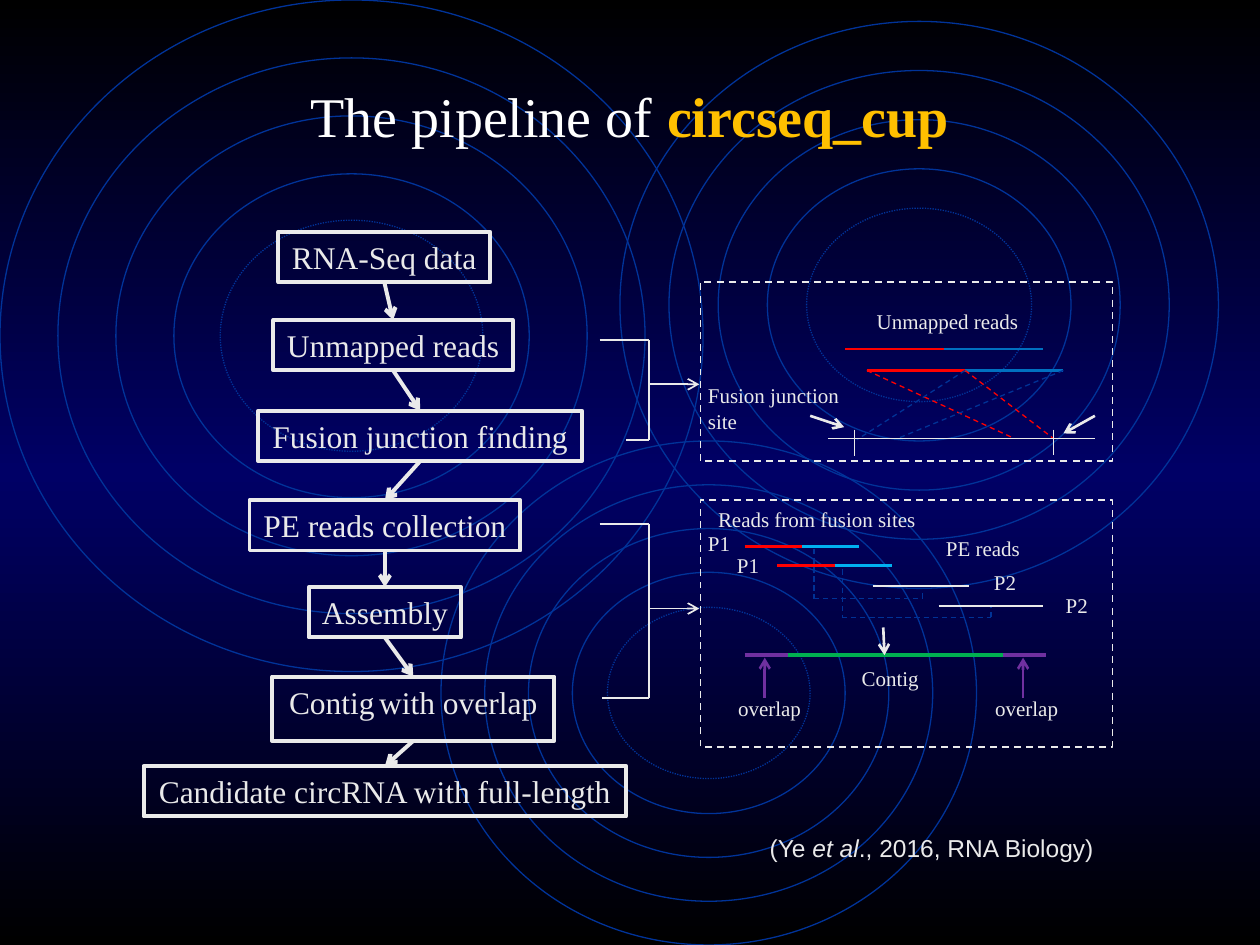
from dataclasses import dataclass
from itertools import pairwise

import pptx
import pptx.dml.color
import pptx.enum.dml
import pptx.enum.shapes
import pptx.enum.text
import pptx.oxml
import pptx.oxml.ns
import pptx.util
from lxml import etree

COLORS = {
    "black": "000000", "navy": "000066", "ring": "003399", "text": "EAEAEA",
    "white": "FFFFFF", "gold": "FFC000", "red": "FF0000", "blue": "0070C0",
    "sky": "00B0F0", "green": "00B050", "purple": "7030A0", "link": "003296",
}
SERIF = "Times New Roman"
COLUMNS, ROWS = 100, 75  # square grid cells, a tenth of an inch each
CELL = pptx.util.Inches(0.1)
DASH = pptx.enum.dml.MSO_LINE.DASH
DOT = pptx.enum.dml.MSO_LINE.ROUND_DOT
SHAPE = pptx.enum.shapes.MSO_SHAPE
ALIGN = pptx.enum.text.PP_ALIGN
ANCHOR = pptx.enum.text.MSO_ANCHOR


@dataclass
class Rings:
    x: float
    y: float
    width: float
    height: float
    step: float


@dataclass
class Step:
    text: str
    x: float
    y: float
    width: float
    height: float = 4.0


@dataclass
class Label:
    text: str
    x: float
    y: float
    width: float
    height: float = 3.0
    wrap: bool = False


@dataclass
class Line:
    x1: float
    y1: float
    x2: float
    y2: float
    color: str = "text"
    width: float = 1.5
    dash: bool = False
    arrow: bool = False


@dataclass
class Bracket:
    top: float
    bottom: float
    middle: float
    top_start: float
    bottom_start: float


RINGS = [
    Rings(27.9, 26.65, 55.8, 53.3, 9.2),
    Rings(56.25, 55, 42.5, 40, 6.95),
    Rings(72.95, 24.2, 47.5, 45, 7.8),
]
STEPS = [
    Step("RNA-Seq data", 22.1, 18.4, 16.8),
    Step("Unmapped reads", 21.7, 25.4, 19),
    Step("Fusion junction finding", 20.5, 32.6, 25.7),
    Step("PE reads collection", 19.8, 39.7, 21.5),
    Step("Assembly", 24.5, 46.6, 12.1),
    Step("Contig with overlap", 21.6, 53.7, 22.4, 5.1),
    Step("Candidate circRNA with full-length", 11.4, 60.8, 38.3),
]
BRACKETS = [Bracket(27, 34.9, 30.5, 47.6, 49.7), Bracket(41.6, 55.4, 48.3, 47.6, 47.8)]
PANELS = [(55.6, 22.4, 32.7, 14.2), (55.6, 39.7, 32.7, 19.6)]
LABELS = [
    Label("Unmapped reads", 68.6, 24, 13.4),
    Label("Fusion junction site", 55.2, 29.9, 13.3, 5.1, True),
    Label("Reads from fusion sites", 56, 39.7, 17.9),
    Label("PE reads", 74.1, 42, 8),
    Label("P1", 55.2, 41.6, 3.8),
    Label("P1", 57.5, 43.4, 3.8),
    Label("P2", 77.9, 44.7, 3.8),
    Label("P2", 83.6, 46.5, 3.8),
    Label("Contig", 67.4, 52.3, 6.6),
    Label("overlap", 57.6, 54.7, 7.1),
    Label("overlap", 78, 54.7, 7.1),
]


def two_part_read(x: float, y: float, half: float, color: str) -> list[Line]:
    middle = x + half
    return [Line(x, y, middle, y, "red"), Line(middle, y, middle + half, y, color)]


FUSION_LINES = [
    *two_part_read(67.1, 27.7, 7.85, "blue"),
    *two_part_read(68.8, 29.4, 7.8, "blue"),
    Line(68.8, 29.4, 80.5, 34.8, "red", 0.75, dash=True),
    Line(76.6, 29.4, 83.6, 34.8, "red", 0.75, dash=True),
    Line(76.6, 29.4, 68, 34.9, "link", 0.75, dash=True),
    Line(84.4, 29.4, 71, 34.9, "link", 0.75, dash=True),
    Line(65.7, 34.8, 86.9, 34.8, width=1),
    Line(67.8, 34.1, 67.8, 36.2, width=0.75),
    Line(83.6, 34.1, 83.6, 36.1, width=0.75),
    Line(86.9, 33, 84.4, 34.4, arrow=True),
    Line(64.3, 33, 67, 33.9, arrow=True),
]
ASSEMBLY_LINES = [
    *two_part_read(59.1, 43.4, 4.55, "sky"),
    *two_part_read(61.7, 44.9, 4.55, "sky"),
    Line(69.3, 46.5, 76.9, 46.5),
    Line(74.5, 48.1, 82.8, 48.1),
    Line(61.7, 52, 80.5, 52, "green", 2.25),
    Line(59.1, 52, 62.5, 52, "purple", 2.25),
    Line(79.6, 52, 83, 52, "purple", 2.25),
    Line(70.1, 49.8, 70.2, 52, arrow=True),
    Line(60.7, 55.4, 60.7, 52.2, "purple", arrow=True),
    Line(81.2, 55.4, 81.2, 52.2, "purple", arrow=True),
]


def pair_lines(left: float, right: float, top1: float, top2: float, base: float) -> list[Line]:
    points = [(left, top1), (left, base), (right, base), (right, top2)]
    return [Line(*start, *end, "link", 0.75, dash=True) for start, end in pairwise(points)]


PAIR_LINES = pair_lines(64.6, 73.2, 43.6, 46.7, 47.5) + pair_lines(66.85, 78.65, 45.2, 48.2, 49)


def rgb(name: str) -> pptx.dml.color.RGBColor:
    return pptx.dml.color.RGBColor.from_string(COLORS[name])


def cells(*lengths: float) -> list[int]:
    return [round(length * CELL) for length in lengths]


def set_background(slide) -> None:
    fill = slide.background.fill
    fill.gradient()
    fill.gradient_angle = 90
    stops = slide.background._cSld.find(".//" + pptx.oxml.ns.qn("a:gsLst"))
    for stop in list(stops):
        stops.remove(stop)
    for position, name in [(0, "black"), (50000, "navy"), (100000, "black")]:
        stop = etree.SubElement(stops, pptx.oxml.ns.qn("a:gs"), pos=str(position))
        etree.SubElement(stop, pptx.oxml.ns.qn("a:srgbClr"), val=COLORS[name])


def add_outline(slide, kind, box: tuple, color: str, width: float, dash=None):
    shape = slide.shapes.add_shape(kind, *cells(*box))
    shape.shadow.inherit = False
    shape.fill.background()
    shape.line.color.rgb = rgb(color)
    shape.line.width = pptx.util.Pt(width)
    if dash:
        shape.line.dash_style = dash
    return shape


def add_line(slide, line: Line):
    connector = slide.shapes.add_connector(
        pptx.enum.shapes.MSO_CONNECTOR.STRAIGHT, *cells(line.x1, line.y1, line.x2, line.y2))
    connector.line.color.rgb = rgb(line.color)
    connector.line.width = pptx.util.Pt(line.width)
    if line.dash:
        connector.line.dash_style = DASH
    if line.arrow:
        etree.SubElement(connector.line._get_or_add_ln(), pptx.oxml.ns.qn("a:tailEnd"), type="arrow")
    etree.SubElement(connector._element.spPr, pptx.oxml.ns.qn("a:effectLst"))
    return connector


def write(shape, texts: list[str], size: float, font: str = SERIF, color: str = "text",
          align=ALIGN.LEFT, anchor=ANCHOR.TOP, wrap: bool = False) -> list:
    frame = shape.text_frame
    frame.word_wrap = wrap
    frame.vertical_anchor = anchor
    paragraph = frame.paragraphs[0]
    paragraph.alignment = align
    paragraph.font.size = pptx.util.Pt(size)
    paragraph.font.name = font
    paragraph.font.color.rgb = rgb(color)
    runs = []
    for text in texts:
        run = paragraph.add_run()
        run.text = text
        runs.append(run)
    return runs


def add_rings(slide, rings: Rings) -> None:
    for inset in (0, 1, 2, 3, 3.8):
        width, height = rings.width - inset * rings.step, rings.height - inset * rings.step
        box = (rings.x - width / 2, rings.y - height / 2, width, height)
        add_outline(slide, SHAPE.OVAL, box, "ring", 0.75, DOT if inset == 3.8 else None)


def add_step(slide, step: Step):
    shape = add_outline(slide, SHAPE.RECTANGLE, (step.x, step.y, step.width, step.height), "text", 2.25)
    if step.text.startswith("Contig"):  # narrow gap after the first word
        runs = write(shape, ["Contig", " ", "with overlap"], 18, align=ALIGN.CENTER)
        runs[1].font.size = pptx.util.Pt(10)
    else:
        write(shape, [step.text], 18, align=ALIGN.CENTER)
    return shape


def add_bracket(slide, bracket: Bracket) -> None:
    spine, panel = 51.5, 55.5
    add_line(slide, Line(bracket.top_start, bracket.top, spine, bracket.top, width=1))
    add_line(slide, Line(bracket.bottom_start, bracket.bottom, spine, bracket.bottom, width=1))
    add_line(slide, Line(spine, bracket.top, spine, bracket.bottom, width=1))
    add_line(slide, Line(spine, bracket.middle, panel, bracket.middle, width=1, arrow=True))


def main() -> None:
    presentation = pptx.Presentation()
    presentation.slide_width, presentation.slide_height = COLUMNS * CELL, ROWS * CELL
    slide = presentation.slides.add_slide(presentation.slide_layouts[6])

    # Backdrop
    set_background(slide)
    for rings in RINGS:
        add_rings(slide, rings)

    # Pipeline steps, each joined to the next
    boxes = [add_step(slide, step) for step in STEPS]
    for upper, lower in pairwise(boxes):
        arrow = add_line(slide, Line(0, 0, 0, 0, width=2.25, arrow=True))
        arrow.begin_connect(upper, 2)
        arrow.end_connect(lower, 0)

    # Detail panels
    for panel in PANELS:
        add_outline(slide, SHAPE.RECTANGLE, panel, "text", 1, DASH)
    for bracket in BRACKETS:
        add_bracket(slide, bracket)
    for line in FUSION_LINES + ASSEMBLY_LINES + PAIR_LINES:
        add_line(slide, line)
    for label in LABELS:
        box = slide.shapes.add_textbox(*cells(label.x, label.y, label.width, label.height))
        write(box, [label.text], 12, wrap=label.wrap)

    # Title and citation
    title = slide.shapes.add_textbox(*cells(5, 1.6, 90, 15))
    name = write(title, ["The pipeline of ", "circseq_cup"], 32, color="white",
                 align=ALIGN.CENTER, anchor=ANCHOR.MIDDLE, wrap=True)[1]
    name.font.bold = True
    name.font.color.rgb = rgb("gold")
    citation = slide.shapes.add_textbox(*cells(60.1, 65.6, 27.8, 3.3))
    write(citation, ["(Ye ", "et al", "., 2016, RNA Biology)"], 14, "Arial", wrap=True)[1].font.italic = True

    presentation.save("out.pptx")


if __name__ == "__main__":
    main()
